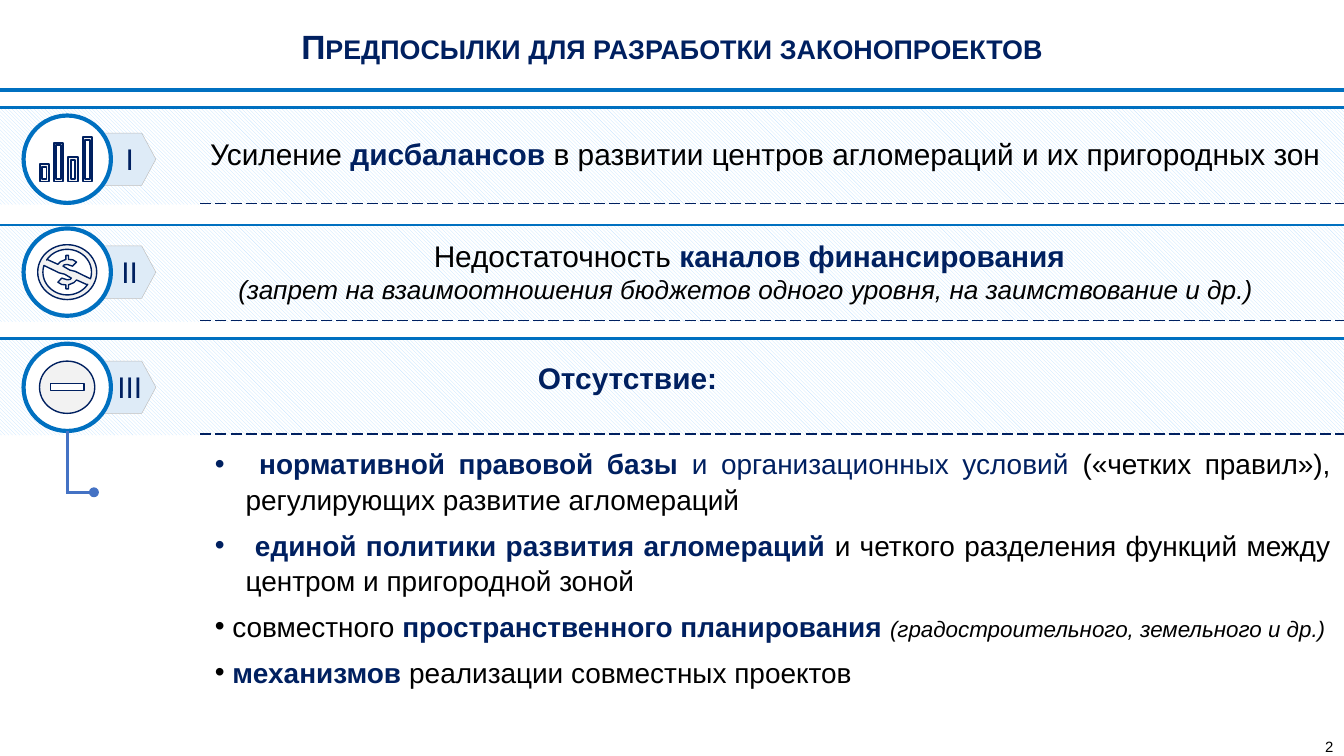
from math import cos, sin, radians
from lxml.etree import SubElement
from pptx import Presentation
from pptx.dml.color import RGBColor
from pptx.enum.dml import MSO_LINE, MSO_PATTERN
from pptx.enum.shapes import MSO_CONNECTOR, MSO_SHAPE
from pptx.enum.text import MSO_ANCHOR, PP_ALIGN
from pptx.oxml.ns import qn
from pptx.util import Pt

HUES = {"navy": "002060", "blue": "0070C0", "tail": "4472C4", "pale": "DEEBF7",
        "gray": "BFBFBF", "icon": "F2F2F2", "hatch": "C2E3FF",
        "white": "FFFFFF", "black": "000000"}
WIDE, HIGH = 720, 405
DISC = 46.8
MID = 36


def hue(name):
    return RGBColor.from_string(HUES[name])


def paint(shape, fill, line, width):
    shape.shadow.inherit = False
    shape.fill.solid()
    shape.fill.fore_color.rgb = hue(fill)
    shape.line.color.rgb = hue(line)
    shape.line.width = Pt(width)


def add_form(slide, kind, x, y, w, h):
    return slide.shapes.add_shape(kind, Pt(x), Pt(y), Pt(w), Pt(h))


def add_line(slide, x1, y1, x2, y2, color, width, dash=None):
    line = slide.shapes.add_connector(
        MSO_CONNECTOR.STRAIGHT, Pt(x1), Pt(y1), Pt(x2), Pt(y2))
    line.line.color.rgb = hue(color)
    line.line.width = Pt(width)
    if dash:
        line.line.dash_style = dash
    SubElement(line._element.spPr, qn("a:effectLst"))


def add_runs(para, runs):
    for text, size, color, style in runs:
        run = para.add_run()
        run.text = text
        font = run.font
        font.name, font.size = "Arial", Pt(size)
        font.color.rgb = hue(color)
        font.bold, font.italic = "b" in style, "i" in style
        if "s" in style:
            run._r.get_or_add_rPr().set("cap", "small")


def add_box(slide, x, y, w, h):
    frame = slide.shapes.add_textbox(Pt(x), Pt(y), Pt(w), Pt(h)).text_frame
    frame.word_wrap = True
    return frame


def add_text(slide, box, *lines):
    para = add_box(slide, *box).paragraphs[0]
    para.alignment = PP_ALIGN.CENTER
    for i, runs in enumerate(lines):
        if i:
            para.add_line_break()
        add_runs(para, runs)


def arc(rx, ry, start=0, end=360):
    steps = [start + (end - start) * i / 48 for i in range(49)]
    return [(rx * cos(radians(a)), ry * sin(radians(a))) for a in steps]


def rect(x, y, w, h):
    return [(x, y), (x + w, y), (x + w, y + h), (x, y + h)]


def bars():
    loops = []
    for i, top in enumerate((2.7, -8.8, -0.9, -11.7)):
        x = -14.8 + 7.7 * i
        loops += [rect(x, top, 5, 12 - top),
                  rect(x + 1.3, top + 1.4, 2.4, 9.2 - top)]
    return loops, 1


def coin():
    half = [(4.3, -0.4), (1.4, -1.1), (-2.2, -3.2), (-1.6, -3.9), (0, -4.1),
            (2.9, -3.2), (5, -5.4), (3, -6.6), (0.7, -6.8), (0.7, -9),
            (-0.7, -9), (-0.7, -6.8), (-3.6, -5.6), (-5, -4.2), (-10.8, -6.8)]
    half += arc(13, 12.2, 212, 377)
    return [arc(15.8, 14.7), half, [(-x, -y) for x, y in half]], 0.75


def minus():
    return [arc(14.8, 14), rect(-9, -2, 18, 3.7)], 0.75


def add_icon(slide, x, y, icon):
    loops, width = icon
    spots = [[(Pt(x + a), Pt(y + b)) for a, b in loop] for loop in loops]
    form = slide.shapes.build_freeform(*spots[0][0], scale=1.0)
    for i, loop in enumerate(spots):
        if i:
            form.move_to(*loop[0])
        form.add_line_segments(loop[1:], close=True)
    paint(form.convert_to_shape(), "icon", "navy", width)


def add_title(slide, x, y, w, h):
    title = slide.shapes.title
    title.left, title.top, title.width, title.height = map(Pt, (x, y, w, h))
    frame = title.text_frame
    frame.vertical_anchor = MSO_ANCHOR.MIDDLE
    para = frame.paragraphs[0]
    para.alignment = PP_ALIGN.CENTER
    add_runs(para, [("Предпосылки для разработки законопроектов", 18, "navy", "bs")])
    add_line(slide, 0, 48.2, WIDE, 48.2, "blue", 2.25)


def add_band(slide, top, mid, left, mark, icon):
    band = add_form(slide, MSO_SHAPE.RECTANGLE, 0, top, WIDE, 51.8)
    band.shadow.inherit = False
    band.fill.patterned()
    band.fill.pattern = MSO_PATTERN.LIGHT_DOWNWARD_DIAGONAL
    band.fill.fore_color.rgb = hue("hatch")
    band.fill.back_color.rgb = hue("white")
    band.line.fill.background()
    add_line(slide, 0, top, WIDE, top, "blue", 1.5)
    add_line(slide, 107.3, top + 51.2, WIDE, top + 51.2, "navy", 0.75, MSO_LINE.LONG_DASH)
    tag = add_form(slide, MSO_SHAPE.PENTAGON, left, mid - 14, 83.5 - left, 28)
    tag.adjustments[0] = 0.27
    paint(tag, "pale", "gray", 0.25)
    disc = add_form(slide, MSO_SHAPE.OVAL, MID - DISC / 2, mid - DISC / 2, DISC, DISC)
    paint(disc, "white", "blue", 2.25)
    add_text(slide, (52, mid - 13.3, 35, 26.6), [(mark, 16, "navy", "")])
    add_icon(slide, MID, mid, icon)


def add_tail(slide, x, y):
    add_line(slide, x, y, x, y + 33, "tail", 1.5)
    add_line(slide, x - 0.7, y + 32.7, x + 12.2, y + 32.7, "tail", 1.5)
    dot = add_form(slide, MSO_SHAPE.OVAL, x + 12.2, y + 30.6, 4.3, 4.3)
    paint(dot, "tail", "tail", 1)


def add_list(slide, x, y, w, h, items):
    frame = add_box(slide, x, y, w, h)
    for i, (hang, runs) in enumerate(items):
        para = frame.add_paragraph() if i else frame.paragraphs[0]
        para.alignment = PP_ALIGN.JUSTIFY
        para.line_spacing = 1.06
        para.space_before = Pt(5.5 if i else 0)
        props = para._p.get_or_add_pPr()
        props.set("marL", str(Pt(hang)))
        props.set("indent", str(-Pt(hang)))
        SubElement(props, qn("a:buFont"), typeface="Arial")
        SubElement(props, qn("a:buChar"), char="•")
        add_runs(para, runs)


def add_page(slide, x, y, w, h):
    frame = add_box(slide, x, y, w, h)
    frame.margin_left = frame.margin_right = frame.margin_top = frame.margin_bottom = 0
    add_runs(frame.paragraphs[0], [("2", 8, "black", "")])


def main():
    deck = Presentation()
    deck.slide_width, deck.slide_height = Pt(WIDE), Pt(HIGH)
    slide = deck.slides.add_slide(deck.slide_layouts[5])
    add_title(slide, 23, 3.6, 674, 42.5)
    for row in ((57.8, 85.3, 38.2, "I", bars()),
                (120.6, 145.8, 44, "II", coin()),
                (181.4, 207.5, 37.5, "III", minus())):
        add_band(slide, *row)
    add_text(slide, (100, 69.1, 620, 26.6), [
        ("Усиление ", 16, "black", ""), ("дисбалансов ", 16, "navy", "b"),
        ("в развитии центров агломераций и их пригородных зон", 16, "black", "")])
    add_text(slide, (83.5, 123.8, 636, 44),
             [("Недостаточность ", 16, "black", ""),
              ("каналов финансирования", 16, "navy", "b")],
             [("(запрет на взаимоотношения бюджетов одного уровня, "
               "на заимствование и др.) ", 14, "black", "i")])
    add_text(slide, (30.2, 189.4, 612, 26.6), [("Отсутствие:", 16, "navy", "b")])
    add_tail(slide, MID, 231)
    add_list(slide, 108, 234.7, 612, 134.6, [
        (16.5, [(" нормативной правовой базы ", 15, "navy", "b"),
                ("и организационных условий ", 15, "navy", ""),
                ("(«четких правил»), регулирующих развитие агломераций", 15, "black", "")]),
        (16.5, [(" единой политики развития агломераций ", 15, "navy", "b"),
                ("и четкого разделения функций между центром и пригородной зоной",
                 15, "black", "")]),
        (0, [(" совместного ", 15, "black", ""),
             ("пространственного планирования ", 15, "navy", "b"),
             ("(градостроительного, земельного и др.)", 12, "black", "i")]),
        (0, [(" ", 15, "black", "b"), ("механизмов ", 15, "navy", "b"),
             ("реализации совместных проектов", 15, "black", "")])])
    add_page(slide, 709.9, 395, 10, 10)
    deck.save("out.pptx")


if __name__ == "__main__":
    main()
